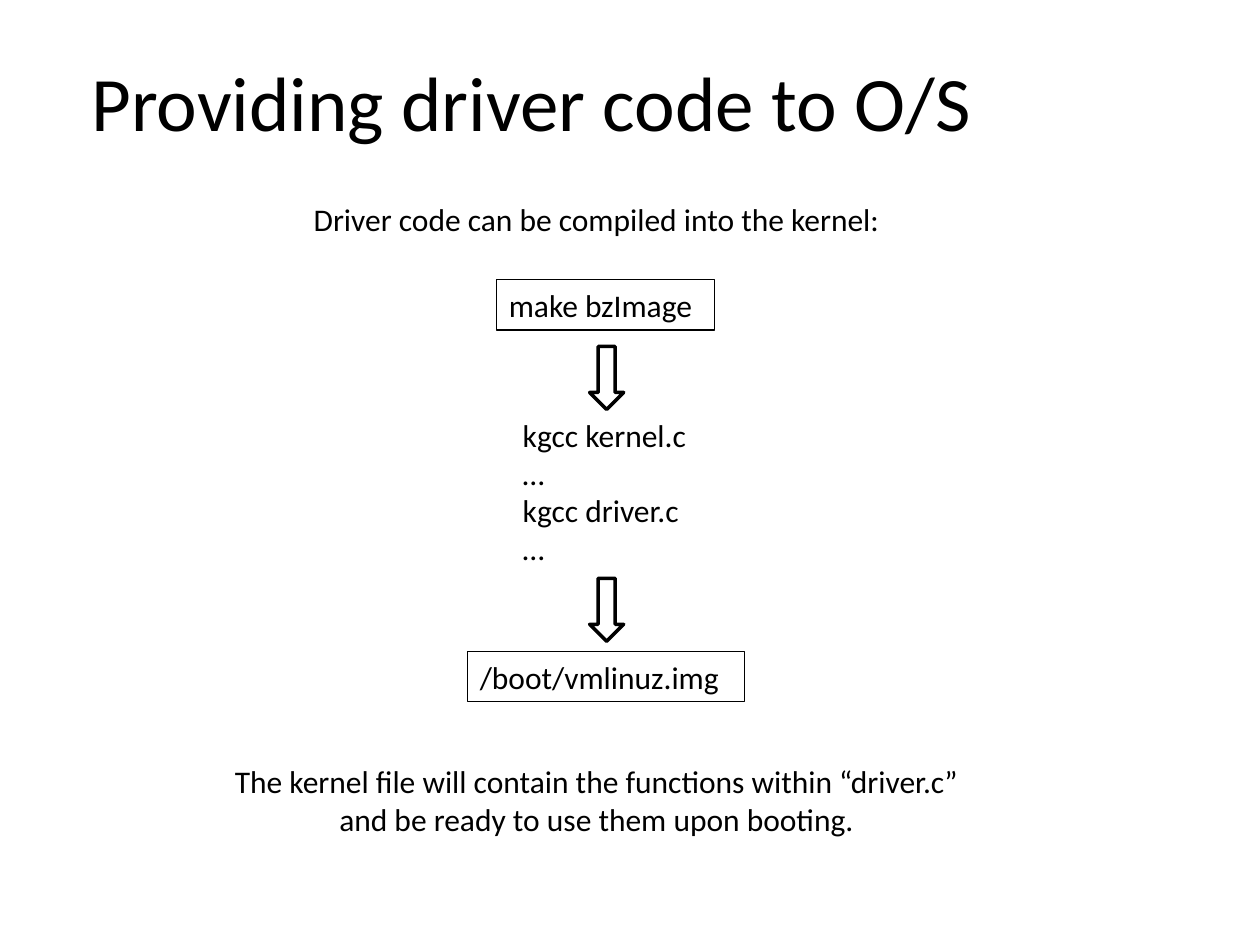
from pptx import Presentation
from pptx.dml.color import RGBColor
from pptx.enum.shapes import MSO_SHAPE
from pptx.enum.text import MSO_ANCHOR, PP_ALIGN
from pptx.util import Inches, Pt

RECT, DOWN = MSO_SHAPE.RECTANGLE, MSO_SHAPE.DOWN_ARROW
LEFT, CENTER, TOP = PP_ALIGN.LEFT, PP_ALIGN.CENTER, MSO_ANCHOR.TOP
COLORS = {"ink": "000000"}
FONT = "Calibri"


def write(sp, lines, size=18, align=LEFT):
    """Write one paragraph per line into a shape."""
    tf = sp.text_frame
    tf.word_wrap = True
    tf.vertical_anchor = TOP
    for i, line in enumerate(lines):
        p = tf.paragraphs[0] if i == 0 else tf.add_paragraph()
        p.alignment = align
        r = p.add_run()
        r.text = line
        for name, value in {"name": FONT, "size": Pt(size)}.items():
            setattr(r.font, name, value)
        r.font.color.rgb = RGBColor.from_string(COLORS["ink"])


def add_text(s, box, lines, **style):
    """Add a plain text box."""
    write(s.shapes.add_textbox(*map(Inches, box)), lines, **style)


def add_outline(s, kind, box, width):
    """Add an unfilled shape with a dark outline."""
    sp = s.shapes.add_shape(kind, *map(Inches, box))
    sp.shadow.inherit = False
    sp.fill.background()
    sp.line.color.rgb = RGBColor.from_string(COLORS["ink"])
    sp.line.width = Pt(width)
    return sp


def main():
    """Build the slide on compiling driver code into the kernel."""
    prs = Presentation()
    prs.slide_width, prs.slide_height = Inches(10), Inches(7.5)
    s = prs.slides.add_slide(prs.slide_layouts[6])

    add_text(s, (0.59, 0.38, 7.26, 0.84), ["Providing driver code to O/S"],
             size=44, align=CENTER)
    for box, label in [((3.94, 2.22, 1.73, 0.4), "make bzImage"),
                       ((3.71, 5.17, 2.2, 0.4), "/boot/vmlinuz.img")]:
        write(add_outline(s, RECT, box, 0.75), [label])
    add_text(s, (4.05, 3.25, 1.51, 1.31),
             ["kgcc kernel.c", "…", "kgcc driver.c", "…"])
    add_text(s, (2.36, 1.54, 4.75, 0.4),
             ["Driver code can be compiled into the kernel:"], align=CENTER)
    add_text(s, (1.73, 6, 6.01, 0.71),
             ["The kernel file will contain the functions within “driver.c”",
              "and be ready to use them upon booting."], align=CENTER)
    for top in (2.75, 4.59):
        add_outline(s, DOWN, (4.68, top, 0.27, 0.5), 2)

    prs.save("out.pptx")


if __name__ == "__main__":
    main()
